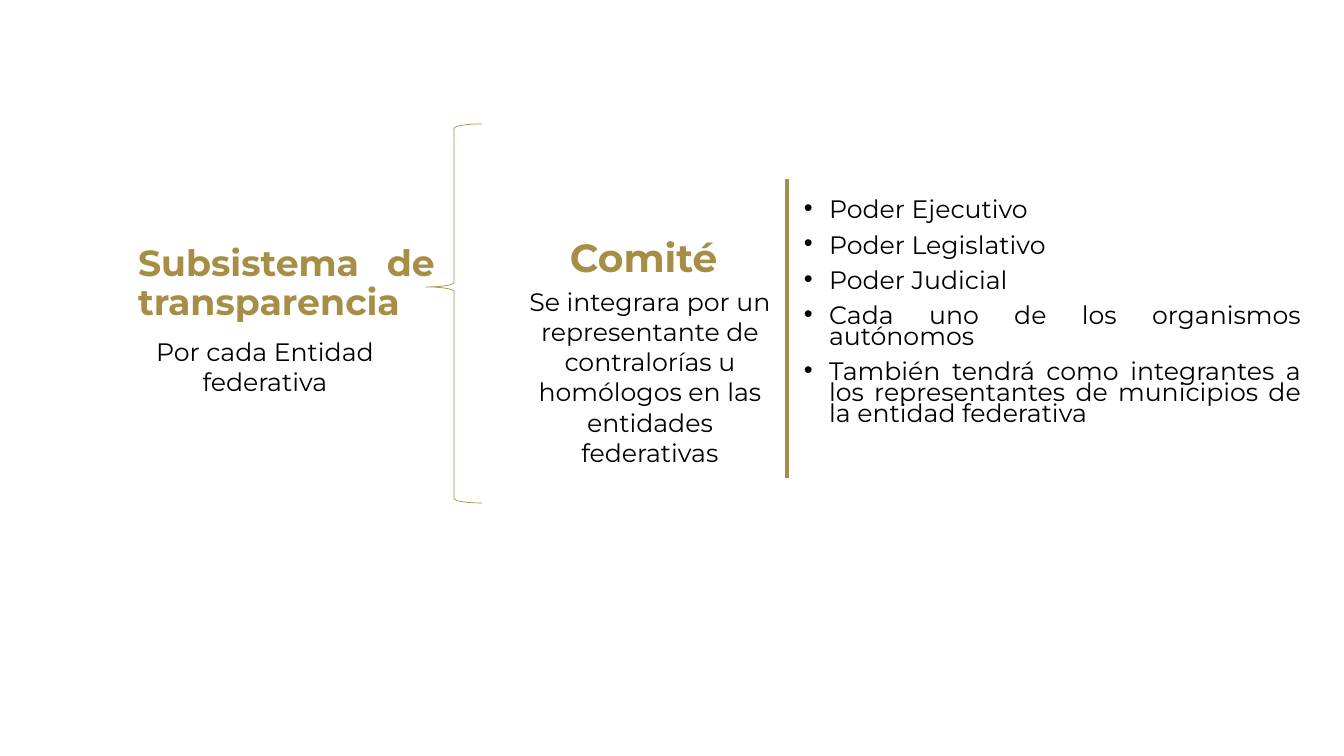
import pptx
import pptx.util
import pptx.dml.color
import pptx.enum.shapes
import pptx.enum.text
import pptx.oxml.ns
import lxml.etree

GOLD = pptx.dml.color.RGBColor(0xA7, 0x8E, 0x47)
BLACK = pptx.dml.color.RGBColor(0, 0, 0)
ALIGN = pptx.enum.text.PP_ALIGN
SCALE = 914400 / 100.8


def px(*lengths):
    return [pptx.util.Emu(round(length * SCALE)) for length in lengths]


def write(box, place, lines, size, color, bold, align, spacing, bullet=False):
    box.left, box.top, box.width, box.height = px(*place)
    frame = box.text_frame
    frame.word_wrap = True
    frame.auto_size = pptx.enum.text.MSO_AUTO_SIZE.NONE
    frame.vertical_anchor = pptx.enum.text.MSO_ANCHOR.TOP
    for index, line in enumerate(lines):
        para = frame.add_paragraph() if index else frame.paragraphs[0]
        para.alignment, para.line_spacing = align, spacing
        if index:
            para.space_before = pptx.util.Pt(10)
        if bullet:
            properties = para._p.get_or_add_pPr()
            properties.set("marL", "228600")
            properties.set("indent", "-228600")
            for tag, name, value in (("a:buFont", "typeface", "Arial"), ("a:buChar", "char", "•")):
                lxml.etree.SubElement(properties, pptx.oxml.ns.qn(tag)).set(name, value)
        span = para.add_run()
        span.text = line
        span.font.color.rgb = color
        formats = {"name": "Montserrat", "size": pptx.util.Pt(size), "bold": bold}
        for name, value in formats.items():
            setattr(span.font, name, value)


deck = pptx.Presentation()
deck.slide_width, deck.slide_height = px(1344, 756)
page = deck.slides.add_slide(deck.slide_layouts[5])

write(page.shapes.title, (128, 240, 317, 95), ["Subsistema de transparencia"],
      25.9, GOLD, True, ALIGN.JUSTIFY, 0.9)

members = [
    "Poder Ejecutivo",
    "Poder Legislativo",
    "Poder Judicial",
    "Cada uno de los organismos autónomos",
    "También tendrá como integrantes a los representantes de municipios de la entidad federativa",
]
committee = ("Se integrara por un representante de contralorías u homólogos "
             "en las entidades federativas")
texts = [
    ((794, 197, 517, 277), members, 18, BLACK, False, ALIGN.JUSTIFY, 0.7, True),
    ((128, 331, 274, 72), ["Por cada Entidad federativa"], 18, BLACK, False, ALIGN.CENTER, 1.0),
    ((560, 234, 179, 61), ["Comité"], 28, GOLD, True, ALIGN.JUSTIFY, 0.9),
    ((513, 281, 274, 194), [committee], 18, BLACK, False, ALIGN.CENTER, 1.0),
]
for place, *style in texts:
    write(page.shapes.add_textbox(*px(*place)), place, *style)

divider = page.shapes.add_connector(
    pptx.enum.shapes.MSO_CONNECTOR.STRAIGHT, *px(787, 179, 787, 478))
lxml.etree.SubElement(divider._element.spPr, pptx.oxml.ns.qn("a:effectLst"))

brace = page.shapes.add_shape(
    pptx.enum.shapes.MSO_SHAPE.LEFT_BRACE, *px(426, 124, 56, 379))
brace.shadow.inherit = False
brace.fill.background()
brace.adjustments[0] = 0.08
brace.adjustments[1] = 0.43

for stroke, width in ((divider, 2.25), (brace, 0.5)):
    stroke.line.color.rgb = GOLD
    stroke.line.width = pptx.util.Pt(width)

deck.save("out.pptx")
